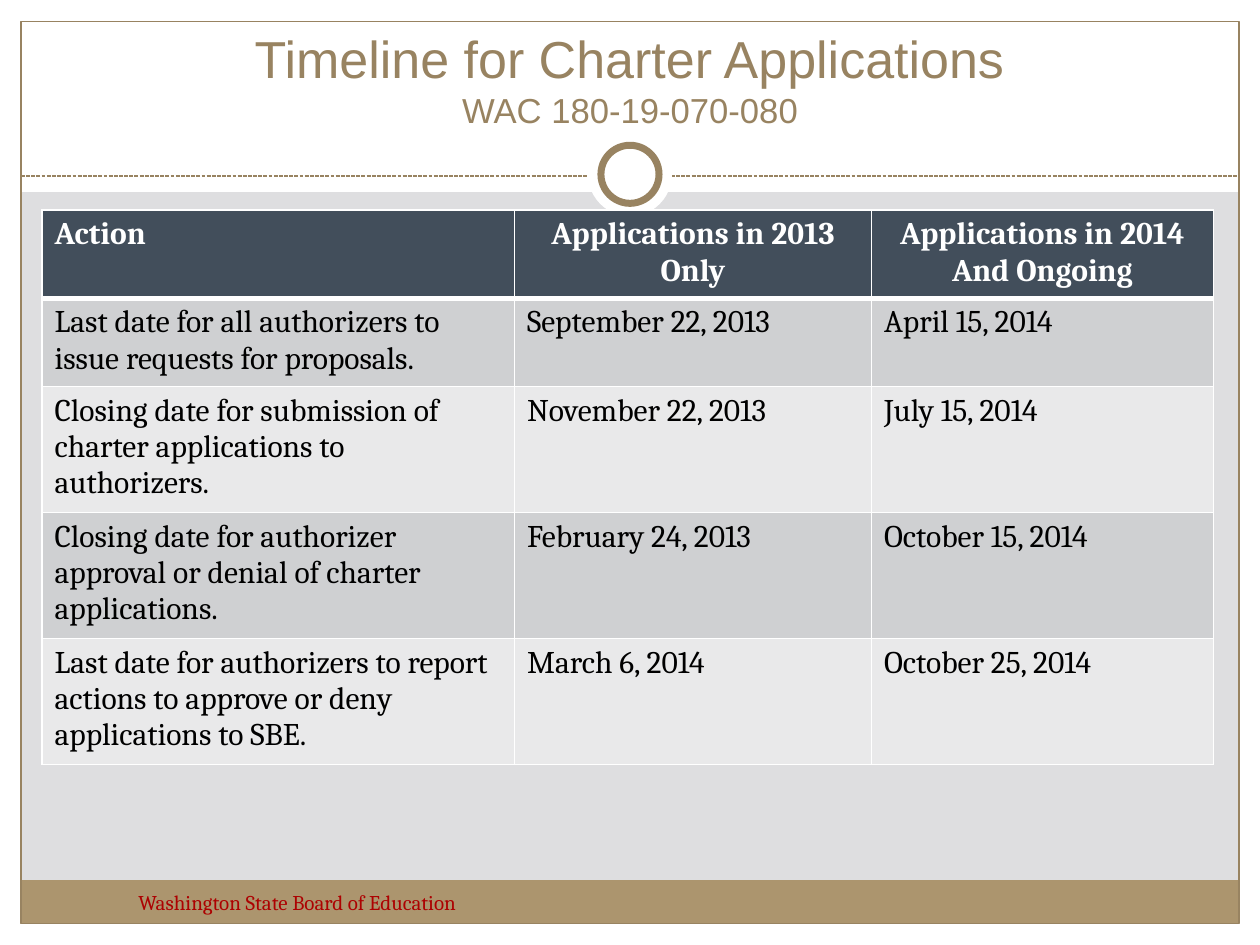
import pptx
import pptx.util
import pptx.dml.color
import pptx.enum.dml
import pptx.enum.shapes
import pptx.enum.text
import pptx.oxml
import pptx.oxml.ns

Pt = pptx.util.Pt
Shape = pptx.enum.shapes.MSO_SHAPE
Align = pptx.enum.text.PP_ALIGN

HUES = {
    "back": "DEDEE0",
    "white": "FFFFFF",
    "black": "000000",
    "tan": "988361",
    "band": "AC956E",
    "red": "AD0101",
    "head": "424E5B",
    "odd": "CFD0D2",
    "even": "E9E9EA",
}

ROWS = [
    ("Action", "Applications in 2013 Only", "Applications in 2014 And Ongoing"),
    ("Last date for all authorizers to issue requests for proposals.",
     "September 22, 2013", "April 15, 2014"),
    ("Closing date for submission of charter applications to authorizers.",
     "November 22, 2013", "July 15, 2014"),
    ("Closing date for authorizer approval or denial of charter applications.",
     "February 24, 2013", "October 15, 2014"),
    ("Last date for authorizers to report actions to approve or deny applications to SBE.",
     "March 6, 2014", "October 25, 2014"),
]
WIDTHS = (270, 204, 195.4)
ROW_HIGH = 29.2


def color(name):
    return pptx.dml.color.RGBColor.from_string(HUES[name])


def style(font, size, hue, face, bold=False):
    font.size = Pt(size)
    font.name = face
    font.bold = bold
    font.color.rgb = color(hue)


def add_box(slide, kind, box, fill=None, line=None, width=0.75):
    shape = slide.shapes.add_shape(kind, *map(Pt, box))
    shape.shadow.inherit = False
    if fill:
        shape.fill.solid()
        shape.fill.fore_color.rgb = color(fill)
    else:
        shape.fill.background()
    if line:
        shape.line.color.rgb = color(line)
        shape.line.width = Pt(width)
    else:
        shape.line.fill.background()


def add_rule(slide, left, right, y):
    rule = slide.shapes.add_connector(
        pptx.enum.shapes.MSO_CONNECTOR.STRAIGHT, Pt(left), Pt(y), Pt(right), Pt(y))
    rule.line.color.rgb = color("tan")
    rule.line.width = Pt(0.75)
    rule.line.dash_style = pptx.enum.dml.MSO_LINE.SQUARE_DOT
    props = rule.element.find(pptx.oxml.ns.qn("p:spPr"))
    props.append(pptx.oxml.parse_xml(
        f'<a:effectLst {pptx.oxml.ns.nsdecls("a")}/>'))


def add_frame(slide):
    for box in ((0, 527.8, 720, 12.2), (0, 0, 720, 109.7),
                (0, 0, 12, 540), (708, 0, 12, 540)):
        add_box(slide, Shape.RECTANGLE, box, "white")
    add_box(slide, Shape.RECTANGLE, (11.8, 503, 695.8, 25), "band")
    add_box(slide, Shape.RECTANGLE, (12, 12.2, 696, 515.6), line="tan")
    add_rule(slide, 12, 708, 100.6)
    add_box(slide, Shape.OVAL, (336, 75.6, 48, 48), "white")
    add_box(slide, Shape.OVAL, (343.4, 83, 33.2, 33.2), "white", "tan", 4)


def set_title(slide):
    title = slide.shapes.title
    title.left, title.top, title.width, title.height = map(Pt, (24, 18, 672, 60))
    frame = title.text_frame
    frame.word_wrap = True
    frame.auto_size = pptx.enum.text.MSO_AUTO_SIZE.NONE
    frame.vertical_anchor = pptx.enum.text.MSO_ANCHOR.BOTTOM
    para = frame.paragraphs[0]
    para.alignment = Align.CENTER
    main_run = para.add_run()
    main_run.text = "Timeline for Charter Applications"
    para.add_line_break()
    sub_run = para.add_run()
    sub_run.text = "WAC 180-19-070-080"
    style(main_run.font, 29.7, "tan", "Arial")
    style(sub_run.font, 19.8, "tan", "Arial")
    title.element.getparent().append(title.element)


def add_note(slide, text, box):
    frame = slide.shapes.add_textbox(*map(Pt, box)).text_frame
    frame.word_wrap = True
    para = frame.paragraphs[0]
    para.text = text
    style(para.font, 12, "red", "Cambria")


def set_edges(cell, base):
    props = cell._tc.get_or_add_tcPr()
    for spot, (side, width) in enumerate(
            (("L", 1), ("R", 1), ("T", 1), ("B", base))):
        props.insert(spot, pptx.oxml.parse_xml(
            f'<a:ln{side} {pptx.oxml.ns.nsdecls("a")} w="{Pt(width)}">'
            f'<a:solidFill><a:srgbClr val="{HUES["white"]}"/></a:solidFill>'
            f'</a:ln{side}>'))


def fill_cell(cell, text, row, col):
    head = row == 0
    cell.fill.solid()
    cell.fill.fore_color.rgb = color(
        "head" if head else "odd" if row % 2 else "even")
    set_edges(cell, 3 if head else 1)
    para = cell.text_frame.paragraphs[0]
    para.text = text
    para.alignment = Align.CENTER if head and col else Align.LEFT
    style(para.font, 18, "white" if head else "black", "Cambria", head)


def add_grid(slide):
    table = slide.shapes.add_table(
        len(ROWS), len(WIDTHS), Pt(24), Pt(120),
        Pt(sum(WIDTHS)), Pt(ROW_HIGH * len(ROWS))).table
    for col, width in enumerate(WIDTHS):
        table.columns[col].width = Pt(width)
    for row, texts in enumerate(ROWS):
        table.rows[row].height = Pt(ROW_HIGH)
        for col, text in enumerate(texts):
            fill_cell(table.cell(row, col), text, row, col)


def main():
    deck = pptx.Presentation()
    deck.slide_width, deck.slide_height = Pt(720), Pt(540)
    slide = deck.slides.add_slide(deck.slide_layouts[5])
    slide.background.fill.solid()
    slide.background.fill.fore_color.rgb = color("back")
    add_frame(slide)
    set_title(slide)
    add_note(slide, "Washington State Board of Education", (72, 504.7, 282, 28.8))
    add_grid(slide)
    deck.save("out.pptx")


if __name__ == "__main__":
    main()
